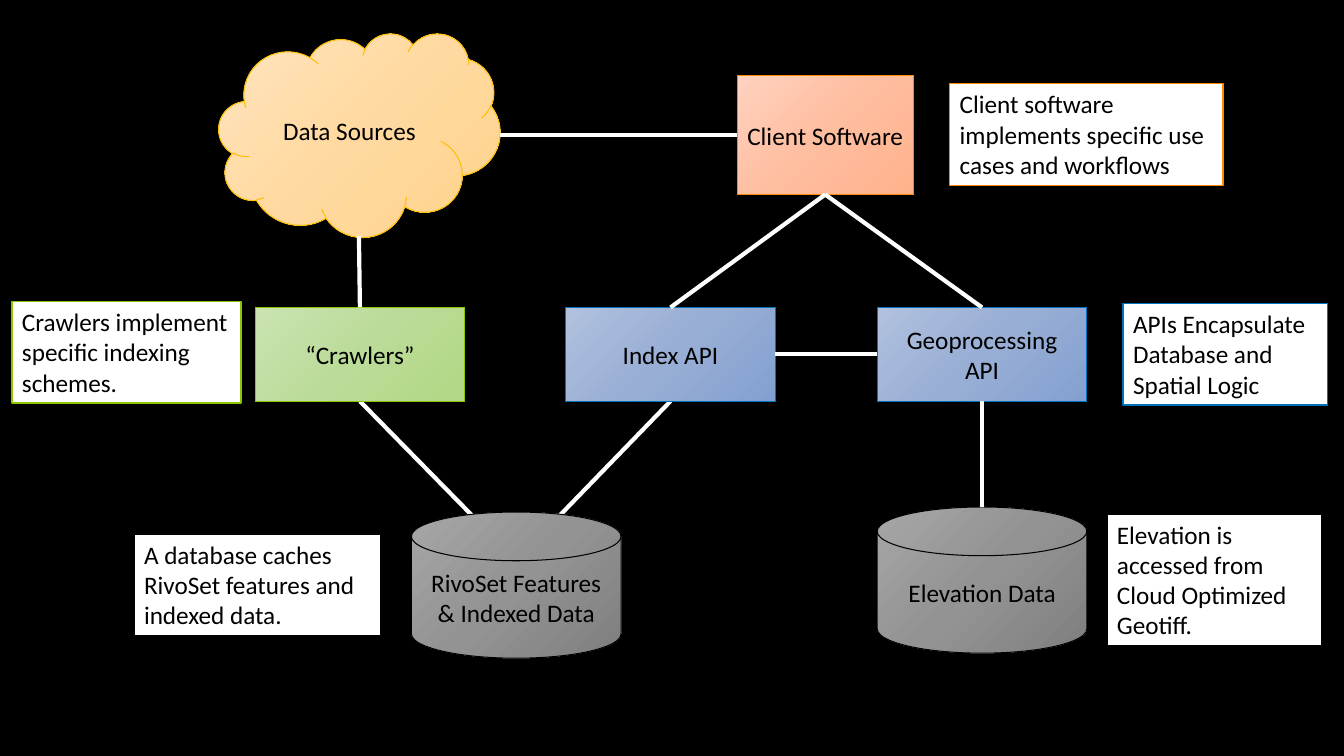
"""Build the architecture diagram of data sources, APIs and client software."""
import copy
import pptx
import pptx.util
import pptx.dml.color
import pptx.enum.shapes
import pptx.enum.text
import pptx.oxml.ns
import lxml.etree

Inches, Pt = pptx.util.Inches, pptx.util.Pt
RGBColor = pptx.dml.color.RGBColor
SHAPE = pptx.enum.shapes.MSO_SHAPE
PP_ALIGN, ANCHOR = pptx.enum.text.PP_ALIGN, pptx.enum.text.MSO_ANCHOR
qn = pptx.oxml.ns.qn

BLACK, WHITE = RGBColor(0, 0, 0), RGBColor(255, 255, 255)
GREEN, BLUE = RGBColor(0x8C, 0xC6, 0x00), RGBColor(0x00, 0x71, 0xBC)
ORANGE, YELLOW = RGBColor(0xFF, 0x86, 0x00), RGBColor(0xFF, 0xBE, 0x00)
GRAY_SHADES = [RGBColor(0xA6, 0xA6, 0xA6), RGBColor(0x93, 0x93, 0x93), RGBColor(0x7F, 0x7F, 0x7F)]
GREEN_SHADES = [RGBColor(0xCB, 0xE3, 0xB2), RGBColor(0xBB, 0xDB, 0x98), RGBColor(0xB1, 0xD8, 0x84)]
BLUE_SHADES = [RGBColor(0xB1, 0xC1, 0xDE), RGBColor(0x98, 0xAE, 0xD5), RGBColor(0x83, 0xA1, 0xD0)]
YELLOW_SHADES = [RGBColor(0xFF, 0xE5, 0xC0), RGBColor(0xFF, 0xD9, 0x9F), RGBColor(0xFF, 0xD3, 0x8C)]
ORANGE_SHADES = [RGBColor(0xFF, 0xD2, 0xC0), RGBColor(0xFF, 0xBD, 0x9F), RGBColor(0xFF, 0xB2, 0x8C)]

DISK, BOX, CLOUD = SHAPE.FLOWCHART_MAGNETIC_DISK, SHAPE.FLOWCHART_PROCESS, SHAPE.CLOUD
TOP, LEFT, BOTTOM, RIGHT = range(4)

NODES = {
    "database": ("RivoSet Features & Indexed Data", DISK, (4.08, 5.08, 2.08, 1.45), GRAY_SHADES, BLACK),
    "elevation": ("Elevation Data", DISK, (8.7, 5.03, 2.08, 1.45), GRAY_SHADES, BLACK),
    "crawlers": ("“Crawlers”", BOX, (2.53, 3.05, 2.08, 0.93), GREEN_SHADES, GREEN),
    "index": ("Index API", BOX, (5.61, 3.05, 2.08, 0.93), BLUE_SHADES, BLUE),
    "geoprocessing": ("Geoprocessing API", BOX, (8.7, 3.05, 2.08, 0.93), BLUE_SHADES, BLUE),
    "sources": ("Data Sources", CLOUD, (2.17, 0.33, 2.79, 2.02), YELLOW_SHADES, YELLOW),
    "client": ("Client Software", BOX, (7.31, 0.75, 1.75, 1.18), ORANGE_SHADES, ORANGE),
}
DATABASE_LID = (5.12, 5.56)
LINKS = [
    (("crawlers", BOTTOM), DATABASE_LID),
    (("index", BOTTOM), DATABASE_LID),
    (("geoprocessing", BOTTOM), (9.74, 5.03)),
    (("geoprocessing", LEFT), ("index", RIGHT)),
    (("client", BOTTOM), ("geoprocessing", TOP)),
    (("client", BOTTOM), ("index", TOP)),
    (("crawlers", TOP), (3.56, 2.34)),
    (("client", LEFT), (4.96, 1.34)),
]
NOTES = [
    ("APIs Encapsulate Database and Spatial Logic", (11.14, 3.01, 2.03, 1.01), BLUE),
    ("Client software implements specific use cases and workflows", (9.42, 0.83, 2.71, 1.01), ORANGE),
    ("Crawlers implement specific indexing schemes.", (0.12, 2.99, 2.27, 1.01), GREEN),
    ("A database caches RivoSet features and indexed data.", (1.33, 5.3, 2.45, 1.01), BLACK),
    ("Elevation is accessed from Cloud Optimized Geotiff.", (10.98, 5.1, 2.13, 1.31), BLACK),
]


def write(shape, text, align):
    tf = shape.text_frame
    tf.word_wrap = True
    p = tf.paragraphs[0]
    p.text, p.alignment = text, align
    p.font.name, p.font.size, p.font.color.rgb = "Calibri", Pt(18), BLACK


def outline(shape, color, width):
    shape.line.color.rgb, shape.line.width = color, Pt(width)


def shade(fill, colors):
    fill.gradient()
    fill.gradient_angle = 315
    first = fill.gradient_stops[0]._element
    first.addnext(copy.deepcopy(first))
    for stop, position, color in zip(fill.gradient_stops, (0, 0.5, 1), colors):
        stop.position, stop.color.rgb = position, color


def add_node(s, text, kind, at, shades, border):
    sp = s.shapes.add_shape(kind, *map(Inches, at))
    sp.shadow.inherit = False
    shade(sp.fill, shades)
    outline(sp, border, 0.75)
    write(sp, text, PP_ALIGN.CENTER)
    sp.text_frame.vertical_anchor = ANCHOR.MIDDLE
    return sp


def add_link(s, nodes, start, end):
    x, y = (0, 0) if end[0] in nodes else end
    line = s.shapes.add_connector(pptx.enum.shapes.MSO_CONNECTOR.STRAIGHT, 0, 0, Inches(x), Inches(y))
    line.begin_connect(nodes[start[0]], start[1])
    if end[0] in nodes:
        line.end_connect(nodes[end[0]], end[1])
    outline(line, WHITE, 3)
    lxml.etree.SubElement(line._element.spPr, qn("a:effectLst"))
    if end == DATABASE_LID:
        nodes["database"]._element.addprevious(line._element)


def add_note(s, text, at, border):
    sp = s.shapes.add_textbox(*map(Inches, at))
    sp.fill.solid()
    sp.fill.fore_color.rgb = WHITE
    outline(sp, border, 1)
    write(sp, text, PP_ALIGN.LEFT)
    sp.text_frame.auto_size = pptx.enum.text.MSO_AUTO_SIZE.SHAPE_TO_FIT_TEXT


def main():
    prs = pptx.Presentation()
    prs.slide_width, prs.slide_height = Inches(13.33), Inches(7.5)
    s = prs.slides.add_slide(prs.slide_layouts[6])
    s.background.fill.solid()
    s.background.fill.fore_color.rgb = BLACK
    nodes = {name: add_node(s, *node) for name, node in NODES.items()}
    for start, end in LINKS:
        add_link(s, nodes, start, end)
    for note in NOTES:
        add_note(s, *note)
    prs.save("out.pptx")


if __name__ == "__main__":
    main()
